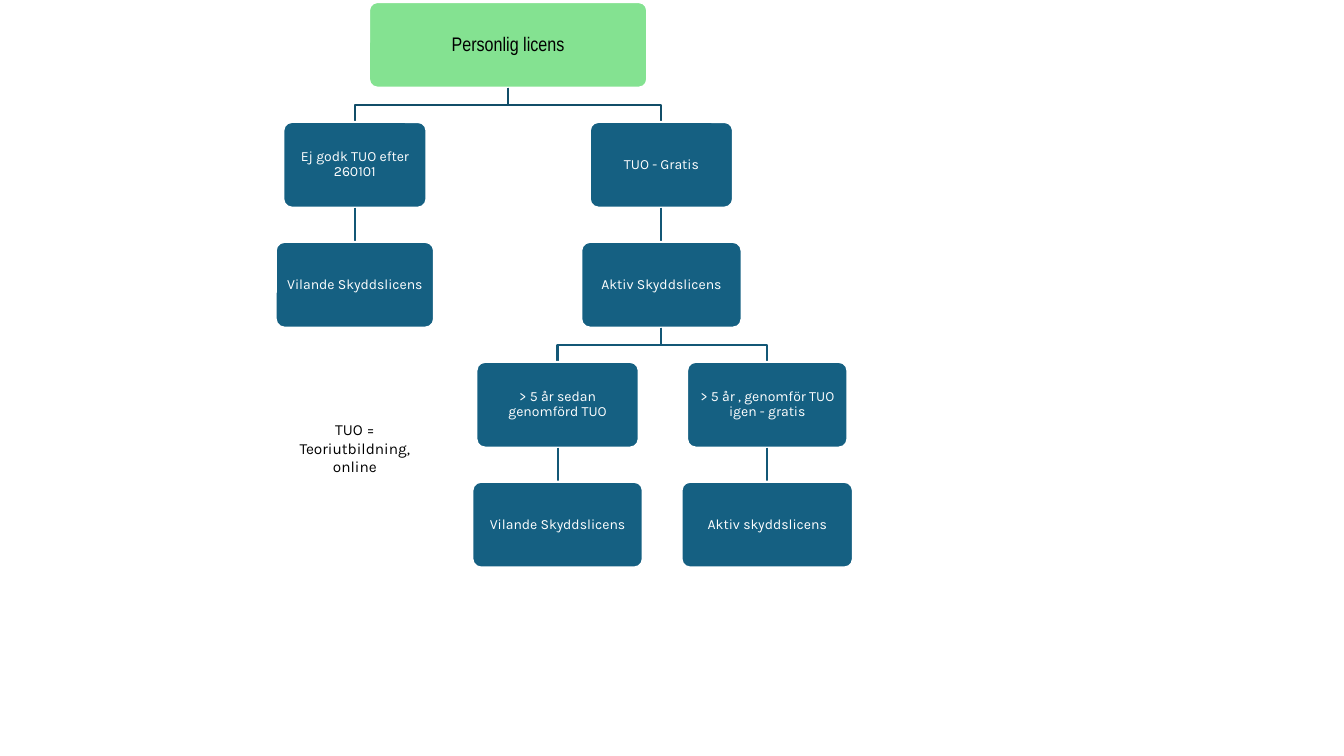
from lxml.etree import SubElement
from pptx import Presentation
from pptx.dml.color import RGBColor
from pptx.enum.shapes import MSO_CONNECTOR, MSO_SHAPE
from pptx.enum.text import MSO_ANCHOR, PP_ALIGN
from pptx.oxml.ns import qn
from pptx.util import Inches, Pt

WHITE = RGBColor(0xFF, 0xFF, 0xFF)
BLACK = RGBColor(0x00, 0x00, 0x00)
GREEN = RGBColor(0x84, 0xE2, 0x91)
BLUE = RGBColor(0x15, 0x60, 0x82)
DARK_BLUE = RGBColor(0x11, 0x4D, 0x68)
MID_BLUE = RGBColor(0x13, 0x57, 0x76)

FIRST_TOP = 0.02
LEVEL_PITCH = 1.19
BOX_HEIGHT = 0.85

# Each box: name, parent, level, centre, width, text
BOXES = [
    ("licence", None, 0, 5.04, 2.76, "Personlig licens"),
    ("not approved", "licence", 1, 3.52, 1.42, "Ej godk TUO efter 260101"),
    ("dormant", "not approved", 2, 3.52, 1.57, "Vilande Skyddslicens"),
    ("free course", "licence", 1, 6.56, 1.42, "TUO - Gratis"),
    ("active", "free course", 2, 6.56, 1.59, "Aktiv Skyddslicens"),
    ("expired", "active", 3, 5.53, 1.61, "> 5 år sedan genomförd TUO"),
    ("dormant again", "expired", 4, 5.53, 1.69, "Vilande Skyddslicens"),
    ("renewed", "active", 3, 7.61, 1.59, "> 5 år , genomför TUO igen - gratis"),
    ("active again", "renewed", 4, 7.61, 1.70, "Aktiv skyddslicens"),
]


class LicenceChart:
    """Draws the boxes, branches and notes of the licence tree."""

    font = "Karla"
    line_width = Pt(1.5)

    def __init__(self, slide):
        self.slide = slide

    def add_text(self, shape, text, size, color, font=None):
        shape.text_frame.word_wrap = True
        paragraph = shape.text_frame.paragraphs[0]
        paragraph.alignment = PP_ALIGN.CENTER
        run = paragraph.add_run()
        run.text = text
        run.font.name = font or self.font
        run.font.size = Pt(size)
        run.font.color.rgb = color
        return paragraph

    def box(self, center, top, width, text, fill=BLUE, color=WHITE,
            size=10, font=None, inset=0.04):
        shape = self.slide.shapes.add_shape(
            MSO_SHAPE.ROUNDED_RECTANGLE, Inches(center - width / 2),
            Inches(top), Inches(width), Inches(BOX_HEIGHT))
        shape.adjustments[0] = 0.1
        shape.shadow.inherit = False
        shape.fill.solid()
        shape.fill.fore_color.rgb = fill
        shape.line.color.rgb = WHITE
        shape.line.width = self.line_width
        frame = shape.text_frame
        frame.vertical_anchor = MSO_ANCHOR.MIDDLE
        frame.margin_left = frame.margin_right = Inches(inset)
        frame.margin_top = frame.margin_bottom = Inches(inset)
        paragraph = self.add_text(shape, text, size, color, font)
        paragraph.line_spacing = 0.9

    def branch(self, start, end, color):
        (start_x, start_y), (end_x, end_y) = start, end
        if start_x == end_x:
            shape = self.slide.shapes.add_connector(
                MSO_CONNECTOR.STRAIGHT, Inches(start_x), Inches(start_y),
                Inches(end_x), Inches(end_y))
            SubElement(shape._element.spPr, qn("a:effectLst"))
        else:
            middle = (start_y + end_y) / 2
            builder = self.slide.shapes.build_freeform(
                Inches(start_x), Inches(start_y))
            corners = [(start_x, middle), (end_x, middle), end]
            builder.add_line_segments(
                [(Inches(x), Inches(y)) for x, y in corners], close=False)
            shape = builder.convert_to_shape()
            shape.shadow.inherit = False
            shape.fill.background()
        shape.line.color.rgb = color
        shape.line.width = self.line_width

    def note(self, left, top, width, height, text):
        shape = self.slide.shapes.add_textbox(
            Inches(left), Inches(top), Inches(width), Inches(height))
        self.add_text(shape, text, 11, BLACK)


def main():
    presentation = Presentation()
    presentation.slide_width = Inches(13.33)
    presentation.slide_height = Inches(7.5)
    slide = presentation.slides.add_slide(presentation.slide_layouts[6])
    chart = LicenceChart(slide)

    # Boxes, each joined to its parent
    bottoms = {}
    for name, parent, level, center, width, text in BOXES:
        top = FIRST_TOP + level * LEVEL_PITCH
        bottoms[name] = (center, top + BOX_HEIGHT)
        if parent is None:
            chart.box(center, top, width, text, GREEN, BLACK, 14,
                      "Arial Narrow", 0.06)
        else:
            color = DARK_BLUE if level == 1 else MID_BLUE
            chart.branch(bottoms[parent], (center, top), color)
            chart.box(center, top, width, text)

    # Explanation of the abbreviation
    chart.note(2.85, 4.12, 1.34, 0.66, "TUO = Teoriutbildning, online")

    presentation.save("out.pptx")


if __name__ == "__main__":
    main()
